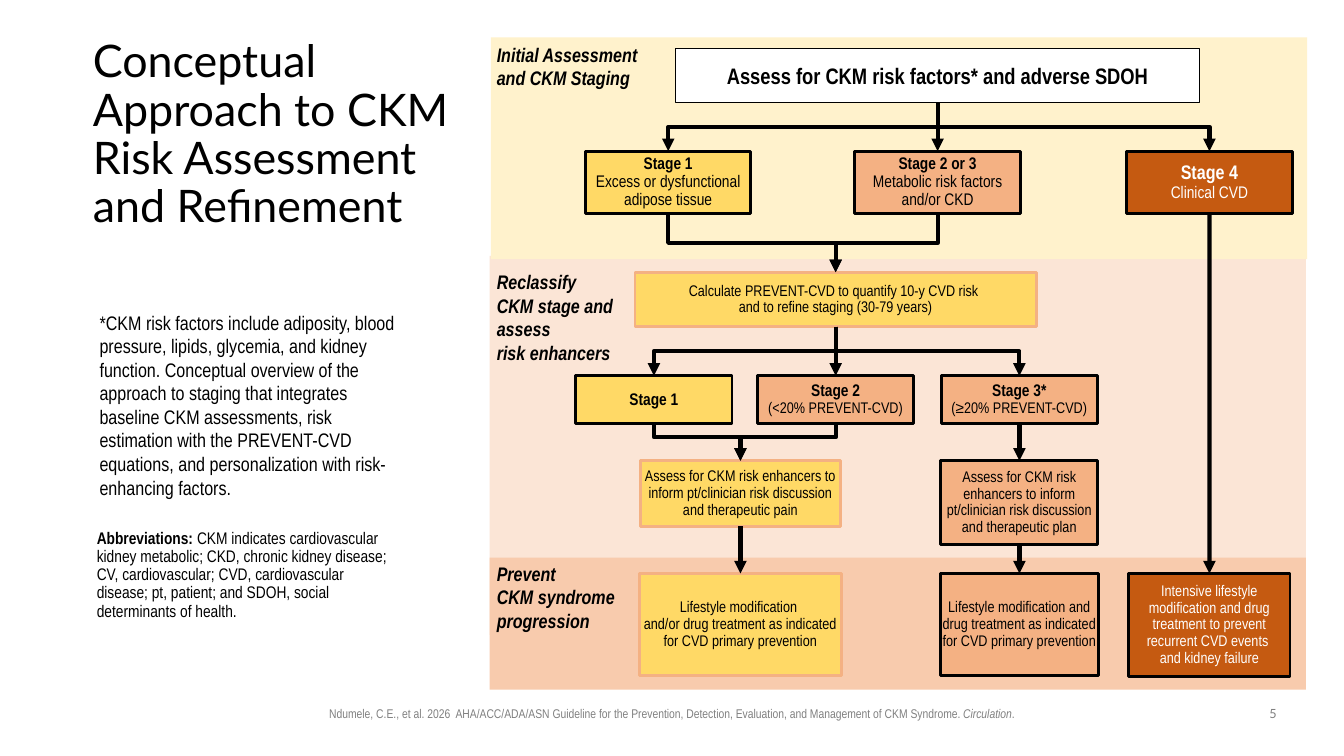
from pptx import Presentation
from pptx.dml.color import RGBColor
from pptx.enum.shapes import MSO_CONNECTOR, MSO_SHAPE
from pptx.enum.text import MSO_ANCHOR, PP_ALIGN
from pptx.oxml.ns import qn
from pptx.util import Cm, Pt
from lxml.etree import SubElement

BLACK, WHITE, GRAY = "000000", "FFFFFF", "808080"
YELLOW, ORANGE, RUST = "FFD966", "F4B183", "C55A11"
NARROW, TITLE_FONT = "Arial Narrow", "Lato"
BOTTOM, TOP = 2, 0


def rgb(value):
    return RGBColor.from_string(value)


def write_run(paragraph, text, font=NARROW, size=12, color=BLACK, bold=False, italic=False):
    """Add text in one format; a newline becomes a line break."""
    for index, line in enumerate(text.split("\n")):
        if index:
            paragraph.add_line_break()
        run = paragraph.add_run()
        run.text = line
        run.font.name = font
        run.font.size = Pt(size)
        run.font.color.rgb = rgb(color)
        run.font.bold = bold
        run.font.italic = italic


def write_text(shape, paragraphs, align=PP_ALIGN.LEFT, anchor=MSO_ANCHOR.TOP,
               insets=(0.25, 0.13, 0.25, 0.13), spacing=1.0, **run_format):
    """Fill a shape; each paragraph is a list of (text, format changes)."""
    frame = shape.text_frame
    frame.word_wrap = True
    frame.vertical_anchor = anchor
    frame.margin_left, frame.margin_top, frame.margin_right, frame.margin_bottom = map(Cm, insets)
    for index, runs in enumerate(paragraphs):
        paragraph = frame.add_paragraph() if index else frame.paragraphs[0]
        paragraph.alignment = align
        paragraph.line_spacing = spacing
        for text, changes in runs:
            write_run(paragraph, text, **{**run_format, **changes})


def add_text(slide, left, top, width, height, *runs, **text_format):
    box = slide.shapes.add_textbox(Cm(left), Cm(top), Cm(width), Cm(height))
    write_text(box, [runs], **text_format)


def add_rectangle(slide, left, top, width, height, fill, line=None, line_width=2):
    shape = slide.shapes.add_shape(MSO_SHAPE.RECTANGLE, Cm(left), Cm(top), Cm(width), Cm(height))
    shape.shadow.inherit = False
    shape.fill.solid()
    shape.fill.fore_color.rgb = rgb(fill)
    if line:
        shape.line.color.rgb = rgb(line)
        shape.line.width = Pt(line_width)
    else:
        shape.line.fill.background()
    return shape


def add_box(slide, center, top, width, height, fill, *lines, line=BLACK, line_width=2, **text_format):
    """Add a flowchart box centred on a column; each line is (text, format changes)."""
    shape = add_rectangle(slide, center - width / 2, top, width, height, fill, line, line_width)
    settings = {"insets": (0, 0, 0, 0), "spacing": 0.9, "size": 11, **text_format}
    write_text(shape, [[item] for item in lines], align=PP_ALIGN.CENTER,
               anchor=MSO_ANCHOR.MIDDLE, **settings)
    return shape


def add_arrow(slide, source, target, bend=0.5):
    """Join a box's bottom to another's top, bending where their columns differ."""
    start_x, start_y = source.left + source.width // 2, source.top + source.height
    end_x, end_y = target.left + target.width // 2, target.top
    across, down = end_x - start_x, end_y - start_y
    straight = abs(across) < Cm(0.02)
    kind = MSO_CONNECTOR.STRAIGHT if straight else MSO_CONNECTOR.ELBOW
    connector = slide.shapes.add_connector(kind, start_x, start_y, end_x, end_y)
    connector.begin_connect(source, BOTTOM)
    connector.end_connect(target, TOP)
    connector.line.color.rgb = rgb(BLACK)
    connector.line.width = Pt(3)
    properties = connector._element.spPr
    if not straight:
        # A quarter turn makes the elbow leave downwards.
        connector.left = (start_x + end_x - down) // 2
        connector.top = (start_y + end_y - abs(across)) // 2
        connector.width, connector.height = down, abs(across)
        transform = properties.find(qn("a:xfrm"))
        transform.set("rot", "16200000" if across > 0 else "5400000")
        transform.set("flipH", "1" if across > 0 else "0")
        guides = properties.find(qn("a:prstGeom")).find(qn("a:avLst"))
        SubElement(guides, qn("a:gd"), name="adj1", fmla=f"val {round(bend * 100000)}")
    SubElement(properties.find(qn("a:ln")), qn("a:tailEnd"), type="triangle")
    SubElement(properties, qn("a:effectLst"))


def add_bands(slide):
    add_rectangle(slide, 12.34, 6.45, 20.57, 9.55, "FBE5D6")
    add_rectangle(slide, 12.37, 0.94, 20.57, 5.59, "FFF2CC")
    add_rectangle(slide, 12.34, 14.05, 20.57, 3.33, "F8CBAD")
    for top, width, height, label in (
        (0.94, 4.39, 1.45, "Initial Assessment and CKM Staging"),
        (6.68, 3.53, 2.67, "Reclassify CKM stage and assess \nrisk enhancers"),
        (14.02, 3.66, 2.06, "Prevent \nCKM syndrome progression"),
    ):
        add_text(slide, 12.27, top, width, height, (label, {}), size=14, bold=True, italic=True)


def add_flowchart(slide):
    heading = {"bold": True, "size": 12}
    plain = {"size": 12}
    assess = add_box(slide, 23.63, 1.22, 13.21, 1.37, WHITE,
                     ("Assess for CKM risk factors* and adverse SDOH", {}),
                     line_width=1, size=16, bold=True, spacing=1.0)

    stages = [
        add_box(slide, center, 3.81, 4.17, 1.57, fill, (name, {**heading, **changes}),
                (detail, plain), color=color)
        for center, fill, color, name, changes, detail in (
            (16.84, YELLOW, BLACK, "Stage 1", {}, "Excess or dysfunctional adipose tissue"),
            (23.63, ORANGE, BLACK, "Stage 2 or 3", {}, "Metabolic risk factors and/or CKD"),
            (30.48, RUST, WHITE, "Stage 4", {"size": 14}, "Clinical CVD"),
        )
    ]
    calculate = add_box(slide, 21.06, 6.86, 10.11, 1.37, YELLOW,
                        ("Calculate PREVENT-CVD to quantify 10-y CVD risk \n"
                         "and to refine staging (30-79 years)", {}), line=ORANGE)

    refined = [
        add_box(slide, center, 9.47, 3.94, 1.2, fill, (name, heading), *details)
        for center, fill, name, details in (
            (16.48, YELLOW, "Stage 1", ()),
            (21.06, ORANGE, "Stage 2", [("(<20% PREVENT-CVD)", {})]),
            (25.69, ORANGE, "Stage 3*", [("(≥20% PREVENT-CVD)", {})]),
        )
    ]
    enhancers = "Assess for CKM risk enhancers to inform pt/clinician risk discussion and therapeutic "
    lower_risk = add_box(slide, 18.66, 11.61, 5.05, 1.65, YELLOW, (enhancers + "pain", {}), line=ORANGE)
    higher_risk = add_box(slide, 25.69, 11.61, 3.96, 2.11, ORANGE, (enhancers + "plan", {}))

    lower_care = add_box(slide, 18.66, 14.45, 5.08, 2.57, YELLOW,
                         ("Lifestyle modification \nand/or drug treatment as indicated "
                          "for CVD primary prevention", {}), line=ORANGE)
    higher_care = add_box(slide, 25.69, 14.45, 3.99, 2.57, ORANGE,
                          ("Lifestyle modification and drug treatment as indicated "
                           "for CVD primary prevention", {}))
    intensive_care = add_box(slide, 30.48, 14.45, 4.06, 2.59, RUST,
                             ("Intensive lifestyle modification and drug treatment to prevent "
                              "recurrent CVD events \nand kidney failure", {}), color=WHITE)

    for stage in stages:
        add_arrow(slide, assess, stage)
    for stage in stages[:2]:
        add_arrow(slide, stage, calculate)
    for stage in refined:
        add_arrow(slide, calculate, stage)
    for stage in refined[:2]:
        add_arrow(slide, stage, lower_risk, bend=0.37)
    for source, target in (
        (refined[2], higher_risk),
        (higher_risk, higher_care),
        (lower_risk, lower_care),
        (stages[2], intensive_care),
    ):
        add_arrow(slide, source, target)


def add_side_text(slide):
    add_text(slide, 2.34, 1.02, 9.47, 4.8,
             ("Conceptual Approach to CKM Risk Assessment and Refinement", {}),
             font=TITLE_FONT, size=32, spacing=0.9, anchor=MSO_ANCHOR.MIDDLE, insets=(0, 0, 0, 0))
    add_text(slide, 2.26, 7.7, 8.23, 5.05,
             ("*CKM risk factors include adiposity, blood pressure, lipids, glycemia, and kidney "
              "function. Conceptual overview of the approach to staging that integrates baseline "
              "CKM assessments, risk estimation with the PREVENT-CVD equations, and "
              "personalization with risk-enhancing factors.", {}), size=14)
    add_text(slide, 2.44, 13.64, 7.87, 2.13,
             ("Abbreviations: ", {"bold": True}),
             ("CKM indicates cardiovascular kidney metabolic; CKD, chronic kidney disease; "
              "CV, cardiovascular; CVD, cardiovascular disease; pt, patient; and SDOH, social "
              "determinants of health.", {}),
             spacing=0.9, anchor=MSO_ANCHOR.BOTTOM, insets=(0, 0.13, 0.25, 0.13))


def add_footer(slide):
    add_text(slide, 5.99, 17.65, 21.89, 0.64,
             ("Ndumele, C.E., et al. 2026  AHA/ACC/ADA/ASN Guideline for the Prevention, Detection, "
              "Evaluation, and Management of CKM Syndrome. ", {}),
             ("Circulation", {"italic": True}), (".", {}),
             size=9, color=GRAY, align=PP_ALIGN.CENTER)
    add_text(slide, 31.55, 17.65, 1.07, 0.66, ("5", {}),
             font=TITLE_FONT, size=9, color=GRAY, align=PP_ALIGN.CENTER)


def main():
    presentation = Presentation()
    presentation.slide_width, presentation.slide_height = Cm(33.87), Cm(19.05)
    slide = presentation.slides.add_slide(presentation.slide_layouts[6])
    add_side_text(slide)
    add_bands(slide)
    add_flowchart(slide)
    add_footer(slide)
    presentation.save("out.pptx")


if __name__ == "__main__":
    main()
